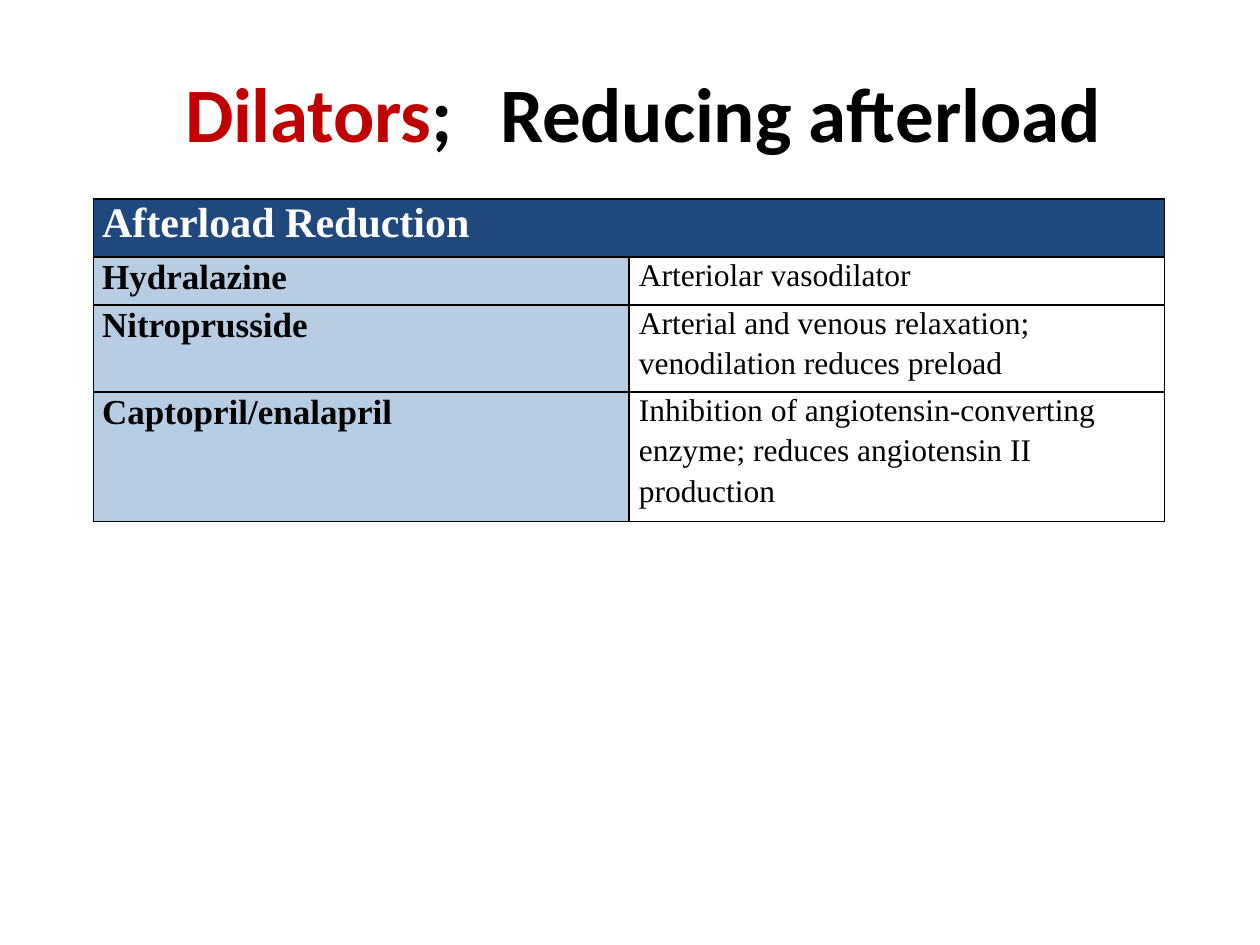
from lxml.etree import SubElement
from pptx import Presentation
from pptx.dml.color import RGBColor
from pptx.enum.text import MSO_ANCHOR, MSO_AUTO_SIZE, PP_ALIGN
from pptx.oxml.ns import qn
from pptx.util import Inches, Pt

BLACK = RGBColor(0, 0, 0)
WHITE = RGBColor(255, 255, 255)
RED = RGBColor(0xC0, 0, 0)
NAVY = RGBColor(0x1F, 0x48, 0x7C)
LIGHT_BLUE = RGBColor(0xB8, 0xCD, 0xE4)

TITLE_FONT = "Calibri"
TABLE_FONT = "Times New Roman"
HEADING = "Afterload Reduction"
DRUGS = [
    ("Hydralazine", ["Arteriolar vasodilator"]),
    ("Nitroprusside", ["Arterial and venous relaxation;",
                       "venodilation reduces preload"]),
    ("Captopril/enalapril", ["Inhibition of angiotensin-converting",
                             "enzyme; reduces angiotensin II",
                             "production"]),
]
ROW_HEIGHTS = [0.46, 0.38, 0.69, 1.03]


def add_span(para, text, font, size, color, bold=False, spacing=0):
    span = para.add_run()
    span.text = text
    span.font.name = font
    span.font.size = Pt(size)
    span.font.bold = bold
    span.font.color.rgb = color
    if spacing:
        span.font._element.set("spc", str(round(spacing * 100)))


def indent(para, length):
    properties = para._p.get_or_add_pPr()
    properties.set("marL", str(length))
    properties.set("indent", "0")
    return properties


def add_title(page, left, top, width, height):
    box = page.shapes.title
    box.left, box.top, box.width, box.height = left, top, width, height
    frame = box.text_frame
    frame.margin_left = frame.margin_right = frame.margin_bottom = 0
    frame.margin_top = Inches(0.01)
    frame.vertical_anchor = MSO_ANCHOR.TOP
    frame.auto_size = MSO_AUTO_SIZE.SHAPE_TO_FIT_TEXT
    para = frame.paragraphs[0]
    para.alignment = PP_ALIGN.LEFT
    para.space_before = Pt(1.1)
    tabs = SubElement(indent(para, Inches(0.01)), qn("a:tabLst"))
    SubElement(tabs, qn("a:tab"), pos=str(Inches(2.37)), algn="l")
    for text, color, spacing in [("Dilators", RED, -0.2), (";\t", BLACK, -0.2),
                                 ("Reducing afterload", BLACK, -0.1)]:
        add_span(para, text, TITLE_FONT, 44, color, True, spacing)


def add_borders(cell):
    properties = cell._tc.get_or_add_tcPr()
    for side in ("lnL", "lnR", "lnT", "lnB"):
        line = SubElement(properties, qn(f"a:{side}"), w=str(Pt(1)))
        fill = SubElement(line, qn("a:solidFill"))
        SubElement(fill, qn("a:srgbClr"), val=str(BLACK))


def fill_cell(cell, lines, size, color, bold, fill=None, left=0.07, before=0.8):
    cell.margin_left = cell.margin_right = cell.margin_bottom = 0
    cell.margin_top = Inches(0.01)
    if fill is None:
        cell.fill.background()
    else:
        cell.fill.solid()
        cell.fill.fore_color.rgb = fill
    frame = cell.text_frame
    for index, text in enumerate(lines):
        para = frame.add_paragraph() if index else frame.paragraphs[0]
        para.space_before = Pt(3.2 if index else before)
        indent(para, Inches(left))
        add_span(para, text, TABLE_FONT, size, color, bold)


def add_drug_table(page, left, top, width, height):
    table = page.shapes.add_table(len(DRUGS) + 1, 2, left, top, width, height).table
    table.first_row = table.horz_banding = False
    for row, row_height in zip(table.rows, ROW_HEIGHTS):
        row.height = Inches(row_height)
    for cell in table.iter_cells():
        add_borders(cell)
    table.cell(0, 0).merge(table.cell(0, 1))
    fill_cell(table.cell(0, 0), [HEADING], 24, WHITE, True, NAVY)
    for row, (drug, effect) in enumerate(DRUGS, 1):
        fill_cell(table.cell(row, 0), [drug], 20, BLACK, True, LIGHT_BLUE)
        fill_cell(table.cell(row, 1), effect, 18, BLACK, False, left=0.08, before=0.7)


def main():
    deck = Presentation()
    deck.slide_width, deck.slide_height = Inches(10), Inches(7.5)
    page = deck.slides.add_slide(deck.slide_layouts[5])
    add_title(page, Inches(1.46), Inches(0.51), Inches(7.4), Inches(0.76))
    add_drug_table(page, Inches(0.74), Inches(1.58), Inches(8.5), Inches(sum(ROW_HEIGHTS)))
    deck.save("out.pptx")


if __name__ == "__main__":
    main()
